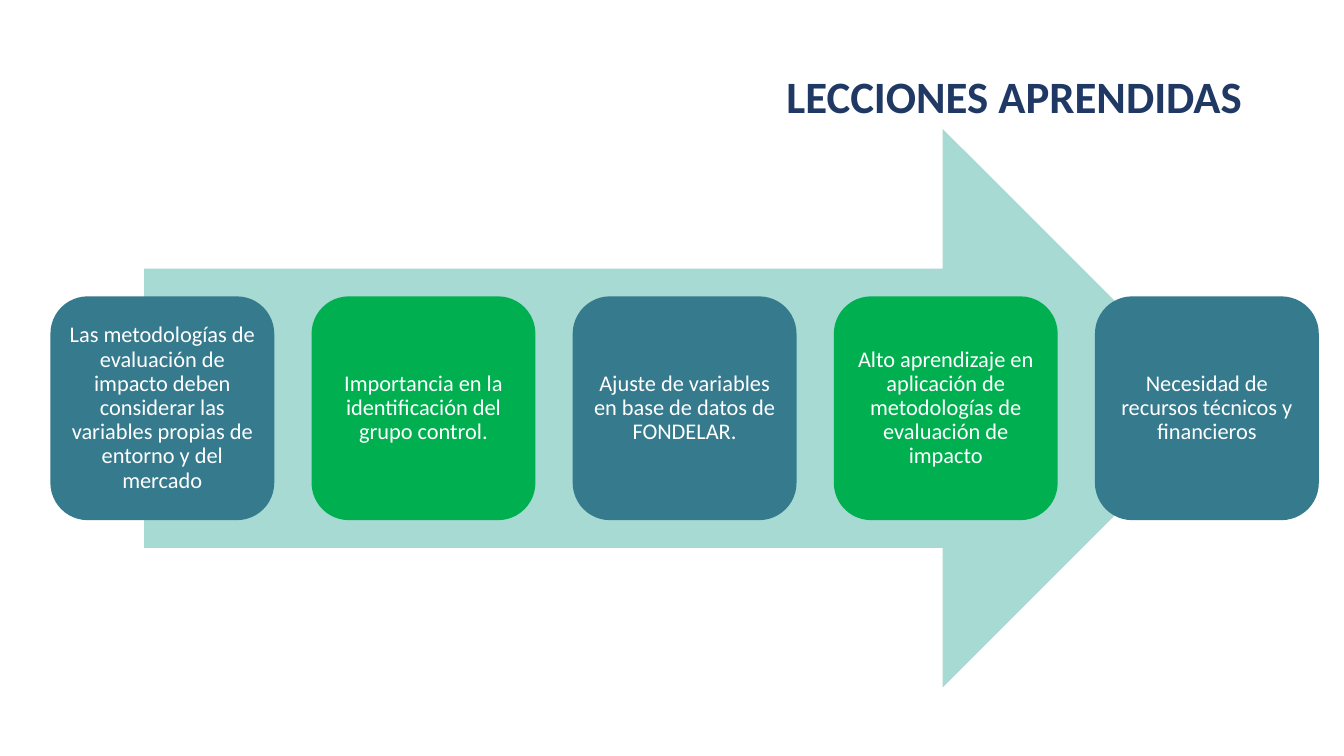
from dataclasses import dataclass

import pptx
import pptx.dml.color
import pptx.enum.shapes
import pptx.enum.text
import pptx.util
from pptx.util import Inches

SHAPES = pptx.enum.shapes.MSO_SHAPE
ALIGN = pptx.enum.text.PP_ALIGN


@dataclass(frozen=True)
class Theme:
    font: str = "Calibri"
    navy: str = "203864"
    mint: str = "A6DAD3"
    teal: str = "367A8D"
    green: str = "00B050"
    white: str = "FFFFFF"
    title_size: int = 32
    lesson_size: int = 16


THEME = Theme()

LESSONS = [
    "Las metodologías de evaluación de impacto deben considerar las "
    "variables propias de entorno y del mercado",
    "Importancia en la identificación del grupo control.",
    "Ajuste de variables en base de datos de FONDELAR.",
    "Alto aprendizaje en aplicación de metodologías de evaluación de impacto",
    "Necesidad de recursos técnicos y financieros",
]
CARD_LEFT, CARD_TOP, CARD_SIZE = 0.5, 2.94, 2.22
CARD_STEP = 2.59


def rgb(color):
    return pptx.dml.color.RGBColor.from_string(color)


def write_text(shape, text, size, color, alignment, inset, bold=False):
    """Fill a shape with one vertically centred, wrapped paragraph."""
    frame = shape.text_frame
    frame.text = text
    frame.word_wrap = True
    frame.vertical_anchor = pptx.enum.text.MSO_ANCHOR.MIDDLE
    frame.margin_left = frame.margin_right = Inches(inset)
    frame.margin_top = frame.margin_bottom = Inches(inset)
    paragraph = frame.paragraphs[0]
    paragraph.alignment = alignment
    paragraph.line_spacing = 0.9
    font = paragraph.runs[0].font
    font.name = THEME.font
    font.size = pptx.util.Pt(size)
    font.bold = bold
    font.color.rgb = rgb(color)


def add_filled_shape(slide, kind, left, top, width, height, color):
    shape = slide.shapes.add_shape(
        kind, Inches(left), Inches(top), Inches(width), Inches(height))
    shape.shadow.inherit = False
    shape.fill.solid()
    shape.fill.fore_color.rgb = rgb(color)
    shape.line.fill.background()
    return shape


def add_title(slide, text):
    box = slide.shapes.add_textbox(
        Inches(0.92), Inches(0.69), Inches(11.5), Inches(0.59))
    write_text(box, text, THEME.title_size, THEME.navy, ALIGN.RIGHT, 0.1, bold=True)


def add_lesson_card(slide, index, text):
    color = THEME.green if index % 2 else THEME.teal
    card = add_filled_shape(
        slide, SHAPES.ROUNDED_RECTANGLE, CARD_LEFT + index * CARD_STEP,
        CARD_TOP, CARD_SIZE, CARD_SIZE, color)
    write_text(card, text, THEME.lesson_size, THEME.white, ALIGN.CENTER, 0.07)


def main():
    presentation = pptx.Presentation()
    presentation.slide_width = Inches(13.33)
    presentation.slide_height = Inches(7.5)
    slide = presentation.slides.add_slide(presentation.slide_layouts[6])

    add_title(slide, "LECCIONES APRENDIDAS")
    add_filled_shape(slide, SHAPES.RIGHT_ARROW, 1.43, 1.28, 10.69, 5.54, THEME.mint)
    for index, lesson in enumerate(LESSONS):
        add_lesson_card(slide, index, lesson)

    presentation.save("out.pptx")


if __name__ == "__main__":
    main()
